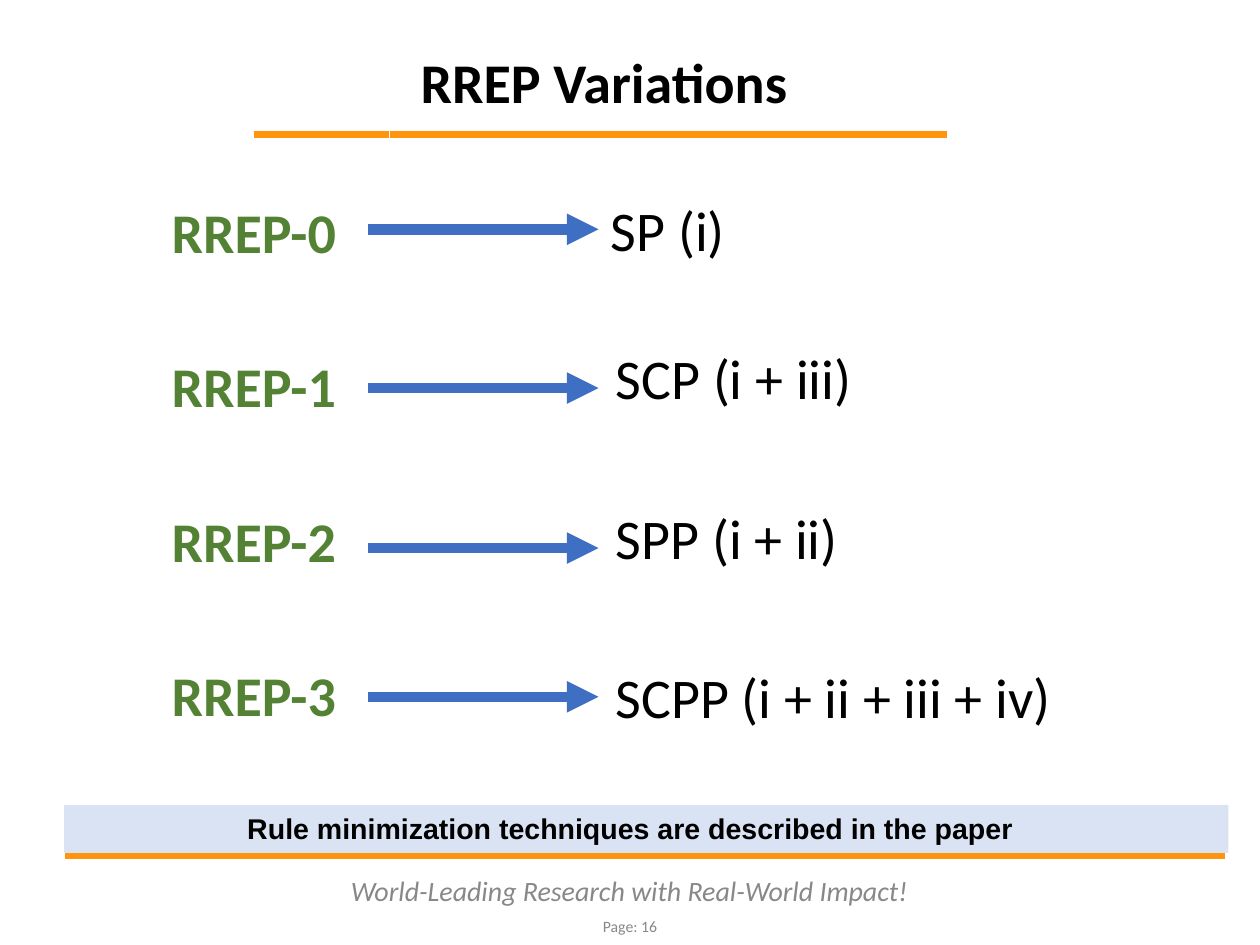
from dataclasses import dataclass

from lxml.etree import SubElement
from pptx import Presentation
from pptx.dml.color import RGBColor
from pptx.enum.shapes import MSO_CONNECTOR as Connector, MSO_SHAPE as Preset
from pptx.enum.text import MSO_ANCHOR as Anchor, PP_ALIGN as Align
from pptx.oxml.ns import qn
from pptx.util import Inches, Pt

ORANGE = "FF950E"
BLUE = "3F6FC3"
GREEN = "548235"
GRAY = "888888"
BLACK = "000000"


@dataclass
class TextStyle:
    size: float
    color: str = BLACK
    font: str = "Calibri"
    bold: bool = False
    italic: bool = False
    align: Align = Align.CENTER
    anchor: Anchor = Anchor.MIDDLE


@dataclass
class Variation:
    name: str
    techniques: str
    text_left: float
    text_top: float
    arrow_y: float


VARIATIONS = [
    Variation("RREP-0", "SP (i)", 4.75, 1.5, 1.82),
    Variation("RREP-1", "SCP (i + iii)", 4.79, 2.68, 3.08),
    Variation("RREP-2", "SPP (i + ii)", 4.79, 3.95, 4.35),
    Variation("RREP-3", "SCPP (i + ii + iii + iv)", 4.79, 5.21, 5.53),
]

TITLE = TextStyle(32, bold=True, anchor=Anchor.BOTTOM)
NAME = TextStyle(32, GREEN, bold=True)
TECHNIQUES = TextStyle(32, align=Align.LEFT, anchor=Anchor.TOP)
BANNER = TextStyle(16.3, font="Arial", bold=True, anchor=Anchor.TOP)
MOTTO = TextStyle(16, GRAY, italic=True)
PAGE = TextStyle(9, GRAY)


def rgb(value: str) -> RGBColor:
    return RGBColor.from_string(value)


def write(text_frame, text: str, style: TextStyle) -> None:
    text_frame.text = text
    paragraph = text_frame.paragraphs[0]
    paragraph.alignment = style.align
    font = paragraph.runs[0].font
    font.name = style.font
    font.size = Pt(style.size)
    font.bold = style.bold
    font.italic = style.italic
    font.color.rgb = rgb(style.color)


def add_text(slide, left: float, top: float, width: float, height: float,
             text: str, style: TextStyle, fill: str = ""):
    box = [Inches(length) for length in (left, top, width, height)]
    if fill:
        shape = slide.shapes.add_shape(Preset.RECTANGLE, *box)
        shape.shadow.inherit = False
        shape.fill.solid()
        shape.fill.fore_color.rgb = rgb(fill)
        shape.line.fill.background()
    else:
        shape = slide.shapes.add_textbox(*box)
    shape.text_frame.word_wrap = True
    shape.text_frame.vertical_anchor = style.anchor
    write(shape.text_frame, text, style)
    return shape


def add_line(slide, left: float, right: float, y: float, color: str,
             width: float, arrow: bool = False) -> None:
    line = slide.shapes.add_connector(
        Connector.STRAIGHT, Inches(left), Inches(y), Inches(right), Inches(y))
    line.line.color.rgb = rgb(color)
    line.line.width = Pt(width)
    if arrow:
        SubElement(line.line._get_or_add_ln(), qn("a:tailEnd"), type="triangle")
    SubElement(line._element.spPr, qn("a:effectLst"))


def add_name_table(slide) -> None:
    frame = slide.shapes.add_table(
        len(VARIATIONS), 1, Inches(0.94), Inches(1), Inches(2.15), Inches(4.9))
    table = frame.table
    table.first_row = False
    table.horz_banding = False
    for row, variation in zip(table.rows, VARIATIONS):
        cell = row.cells[0]
        cell.fill.background()
        cell.margin_top = Inches(0.59)
        cell.vertical_anchor = Anchor.TOP
        write(cell.text_frame, variation.name, NAME)


def main() -> None:
    presentation = Presentation()
    presentation.slide_width = Inches(10)
    presentation.slide_height = Inches(7.5)
    slide = presentation.slides.add_slide(presentation.slide_layouts[6])

    add_line(slide, 2.02, 7.52, 1.07, ORANGE, 4)
    add_line(slide, 0.52, 9.72, 6.79, ORANGE, 4)
    add_text(slide, 2.58, 6.89, 4.83, 0.36,
             "World-Leading Research with Real-World Impact!", MOTTO)
    add_text(slide, 4.06, 7.17, 1.88, 0.36, "Page: 16", PAGE)
    add_name_table(slide)
    add_text(slide, 2.1, 0.45, 5.39, 0.51, "RREP Variations", TITLE, "FFFFFF")

    for variation in VARIATIONS:
        add_text(slide, variation.text_left, variation.text_top, 4.67, 0.64,
                 variation.techniques, TECHNIQUES)
        add_line(slide, 2.92, 4.75, variation.arrow_y, BLUE, 6, arrow=True)

    banner = add_text(slide, 0.51, 6.39, 9.24, 0.38,
                      "Rule minimization techniques are described in the paper",
                      BANNER, "DAE3F3")
    banner.text_frame.margin_right = Inches(0.35)

    presentation.save("out.pptx")


if __name__ == "__main__":
    main()
